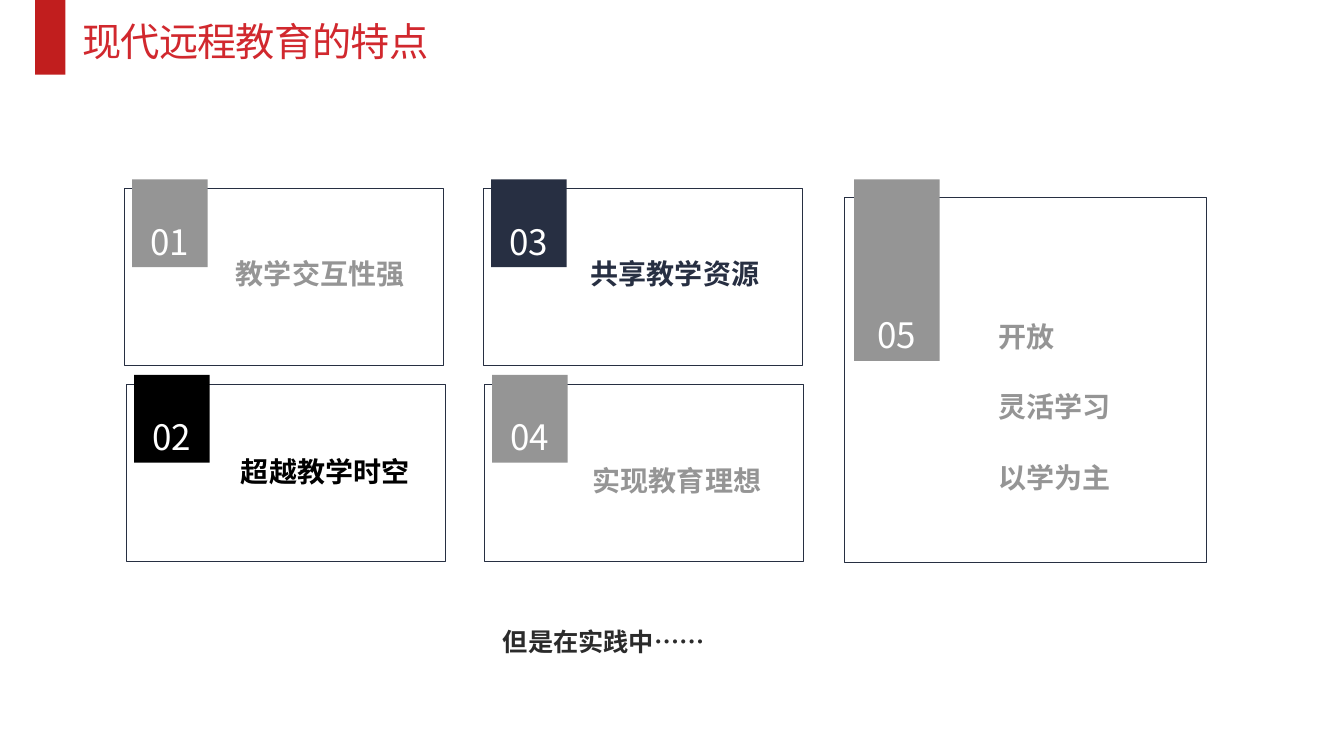
from lxml.etree import SubElement
from pptx import Presentation
from pptx.dml.color import RGBColor
from pptx.enum.shapes import MSO_SHAPE as Shape
from pptx.enum.text import MSO_ANCHOR as Anchor, PP_ALIGN as Align
from pptx.oxml.ns import qn
from pptx.util import Inches, Pt

FONT = "Noto Sans CJK SC"
RED = RGBColor(0xC1, 0x1E, 0x1E)
TITLE_RED = RGBColor(0xD1, 0x28, 0x2E)
NAVY = RGBColor(0x27, 0x2F, 0x42)
GRAY = RGBColor(0x95, 0x95, 0x95)
BLACK = RGBColor(0, 0, 0)
CHARCOAL = RGBColor(0x2B, 0x2B, 0x2B)
WHITE = RGBColor(0xFF, 0xFF, 0xFF)

TITLE = "现代远程教育的特点"
CLOSING = "但是在实践中……"
CARD_SIZE = (3.17, 1.76)
TAG_SIZE = (0.75, 0.87)
TAG_OFFSET = (0.08, -0.09)
CARDS = [
    ("01", "教学交互性强", GRAY, (1.23, 1.87), (2.34, 2.54, 2.18, 0.45)),
    ("03", "共享教学资源", NAVY, (4.79, 1.87), (5.86, 2.54, 2.18, 1.14)),
    ("02", "超越教学时空", BLACK, (1.25, 3.81), (2.39, 4.51, 2.18, 0.69)),
    ("04", "实现教育理想", GRAY, (4.8, 3.81), (5.88, 4.6, 2.18, 0.87)),
]
OPEN_LINES = ["开放", "灵活学习", "以学为主"]

presentation = Presentation()
presentation.slide_width = Inches(13.33)
presentation.slide_height = Inches(7.5)
slide = presentation.slides.add_slide(presentation.slide_layouts[6])


def add_run(paragraph, text, size, color, bold=False, spacing=None):
    run = paragraph.add_run()
    run.text = text
    run.font.name = FONT
    run.font.size = Pt(size)
    run.font.bold = bold
    run.font.color.rgb = color
    properties = run.font._element
    SubElement(properties, qn("a:ea")).set("typeface", FONT)
    if spacing is not None:
        properties.set("spc", str(round(spacing * 100)))


def add_rectangle(box, fill=None, line=None):
    shape = slide.shapes.add_shape(Shape.RECTANGLE, *map(Inches, box))
    shape.shadow.inherit = False
    if fill is None:
        shape.fill.background()
    else:
        shape.fill.solid()
        shape.fill.fore_color.rgb = fill
    if line is None:
        shape.line.fill.background()
    else:
        shape.line.color.rgb = line
        shape.line.width = Pt(0.5)
    return shape


def add_text(box, lines, size, color, bold=True, inset=True, line_spacing=None, spacing=None):
    frame = slide.shapes.add_textbox(*map(Inches, box)).text_frame
    frame.word_wrap = False
    if not inset:
        frame.margin_left = frame.margin_right = 0
        frame.margin_top = frame.margin_bottom = 0
    for index, text in enumerate(lines):
        paragraph = frame.add_paragraph() if index else frame.paragraphs[0]
        if line_spacing:
            paragraph.line_spacing = line_spacing
        add_run(paragraph, text, size, color, bold, spacing)


def add_card(number, lines, color, frame_box, tag_box, text_box, line_spacing=None):
    add_rectangle(frame_box, line=NAVY)
    tag = add_rectangle(tag_box, fill=color)
    tag.text_frame.vertical_anchor = Anchor.BOTTOM
    paragraph = tag.text_frame.paragraphs[0]
    paragraph.alignment = Align.CENTER
    add_run(paragraph, number, 25, WHITE)
    add_text(text_box, lines, 20, color, inset=False, line_spacing=line_spacing)


add_rectangle((0.35, 0, 0.3, 0.74), fill=RED)
add_text((0.72, 0.12, 3.66, 0.57), [TITLE], 28, TITLE_RED, bold=False, spacing=-0.6)

for number, label, color, (left, top), text_box in CARDS:
    tag_box = (left + TAG_OFFSET[0], top + TAG_OFFSET[1], *TAG_SIZE)
    add_card(number, [label], color, (left, top, *CARD_SIZE), tag_box, text_box)

add_card("05", OPEN_LINES, GRAY, (8.37, 1.96, 3.6, 3.62), (8.47, 1.78, 0.85, 1.8),
         (9.9, 2.8, 1.46, 2.22), line_spacing=2.1)
add_text((4.89, 6.16, 2.2, 0.4), [CLOSING], 18, CHARCOAL)

presentation.save("out.pptx")
